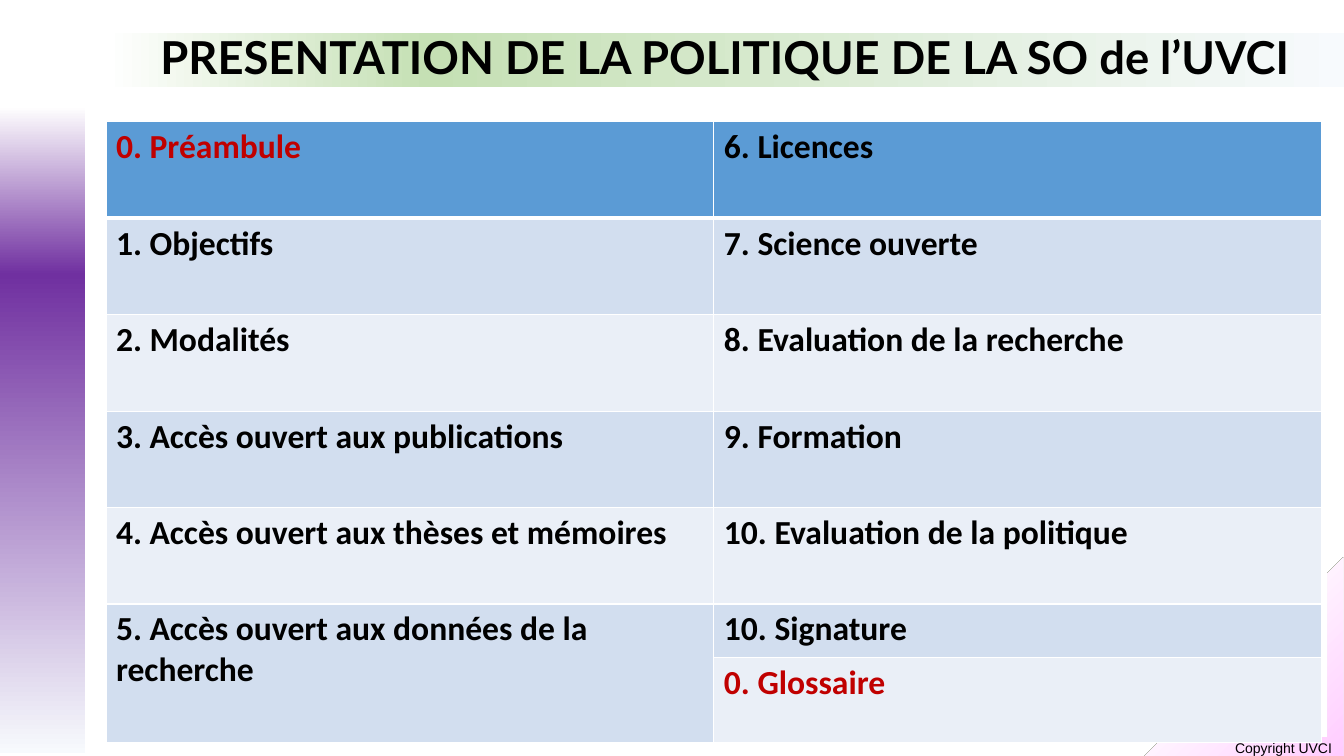
from dataclasses import dataclass

from lxml.etree import SubElement
from pptx import Presentation
from pptx.dml.color import RGBColor
from pptx.enum.shapes import MSO_SHAPE as Shape
from pptx.enum.text import MSO_ANCHOR as Anchor, PP_ALIGN as Align
from pptx.oxml.ns import qn
from pptx.util import Cm, Pt


@dataclass(frozen=True)
class Theme:
    black: str = "000000"
    white: str = "FFFFFF"
    red: str = "C00000"
    header: str = "5B9BD5"
    bands: tuple = ("D2DEEF", "EAEFF7")
    pale: str = "F7FAFD"
    purple: str = "7030A0"
    green: str = "C5E0B4"
    dark_green: str = "385723"
    pink: str = "FFCCFF"
    title_size: float = 32.4
    table_size: float = 24
    footer_size: float = 10


THEME = Theme()
LEFT_TOPICS = [
    "0. Préambule",
    "1. Objectifs",
    "2. Modalités",
    "3. Accès ouvert aux publications",
    "4. Accès ouvert aux thèses et mémoires",
    "5. Accès ouvert aux données de la recherche",
]
RIGHT_TOPICS = [
    "6. Licences",
    "7. Science ouverte",
    "8. Evaluation de la recherche",
    "9. Formation",
    "10. Evaluation de la politique",
    "10. Signature",
    "0. Glossaire",
]
ROW_HEIGHTS = [2.43] * 5 + [1.35, 2.15]


def add_span(para, text, font, size, color, bold=False):
    span = para.add_run()
    span.text = text
    span.font.name = font
    span.font.size = Pt(size)
    span.font.bold = bold
    span.font.color.rgb = RGBColor.from_string(color)


def fill_gradient(shape, stops, circular=False):
    """Fill from right to left, or outwards from the bottom-right corner."""
    shape.fill.gradient()
    gradient = shape.fill._xPr.find(qn("a:gradFill"))
    for child in list(gradient):
        gradient.remove(child)
    stop_list = SubElement(gradient, qn("a:gsLst"))
    for percent, color in stops:
        stop = SubElement(stop_list, qn("a:gs"), pos=str(percent * 1000))
        SubElement(stop, qn("a:srgbClr"), val=color)
    if circular:
        course = SubElement(gradient, qn("a:path"), path="circle")
        SubElement(course, qn("a:fillToRect"), l="100000", t="100000")
    else:
        SubElement(gradient, qn("a:lin"), ang="10800000", scaled="0")


def add_decoration(page, kind, left, top, width, height, rotation):
    shape = page.shapes.add_shape(kind, Cm(left), Cm(top), Cm(width), Cm(height))
    shape.rotation = rotation
    shape.shadow.inherit = False
    shape.line.fill.background()
    return shape


def format_title(page, text):
    title = page.shapes.title
    title.left, title.top, title.width, title.height = Cm(2.67), Cm(0.82), Cm(31.2), Cm(1.37)
    fill_gradient(title, [(0, THEME.pale), (74, THEME.green), (100, THEME.white)])
    title.text_frame.vertical_anchor = Anchor.MIDDLE
    para = title.text_frame.paragraphs[0]
    para.alignment = Align.CENTER
    para.line_spacing = 0.9
    add_span(para, text, "Lato", THEME.title_size, THEME.black, bold=True)


def add_footer(page, text):
    box = page.shapes.add_textbox(Cm(30.86), Cm(18.49), Cm(2.97), Cm(0.69))
    box.text_frame.word_wrap = False
    box.text_frame.vertical_anchor = Anchor.MIDDLE
    para = box.text_frame.paragraphs[0]
    para.alignment = Align.CENTER
    add_span(para, text, "Arial", THEME.footer_size, THEME.black)


def format_cell(cell, row):
    properties = cell._tc.get_or_add_tcPr()
    for side in ("lnL", "lnR", "lnT", "lnB"):
        thick = (row, side) in ((0, "lnB"), (1, "lnT"))
        border = SubElement(properties, qn(f"a:{side}"), w=str(Pt(3 if thick else 1)))
        SubElement(SubElement(border, qn("a:solidFill")), qn("a:srgbClr"), val=THEME.white)
    cell.fill.solid()
    color = THEME.bands[(row - 1) % 2] if row else THEME.header
    cell.fill.fore_color.rgb = RGBColor.from_string(color)


def add_topic_table(page):
    frame = page.shapes.add_table(
        len(ROW_HEIGHTS), 2, Cm(2.67), Cm(3.07), Cm(30.64), Cm(sum(ROW_HEIGHTS)))
    table = frame.table
    for row, height in enumerate(ROW_HEIGHTS):
        table.rows[row].height = Cm(height)
        for cell in table.rows[row].cells:
            format_cell(cell, row)
    table.cell(5, 0).merge(table.cell(6, 0))
    for column, topics in enumerate((LEFT_TOPICS, RIGHT_TOPICS)):
        for row, topic in enumerate(topics):
            color = THEME.red if topic.startswith("0.") else THEME.black
            para = table.cell(row, column).text_frame.paragraphs[0]
            add_span(para, topic, "Calibri", THEME.table_size, color, bold=True)


def main():
    deck = Presentation()
    deck.slide_width, deck.slide_height = Cm(33.87), Cm(19.05)
    page = deck.slides.add_slide(deck.slide_layouts[5])

    corner = add_decoration(page, Shape.HALF_FRAME, 28.85, 14.05, 5, 5, 180)
    corner.adjustments[0], corner.adjustments[1] = 0.095, 0.079
    fill_gradient(corner, [(0, THEME.pink), (66, THEME.white), (100, THEME.dark_green)],
                  circular=True)
    side_bar = add_decoration(page, Shape.RECTANGLE, -7.08, 9.75, 16.3, 2.16, 90)
    fill_gradient(side_bar, [(0, THEME.pale), (74, THEME.purple), (100, THEME.white)])

    add_footer(page, "Copyright UVCI")
    format_title(page, "PRESENTATION DE LA POLITIQUE DE LA SO de l’UVCI")
    add_topic_table(page)
    deck.save("out.pptx")


if __name__ == "__main__":
    main()
